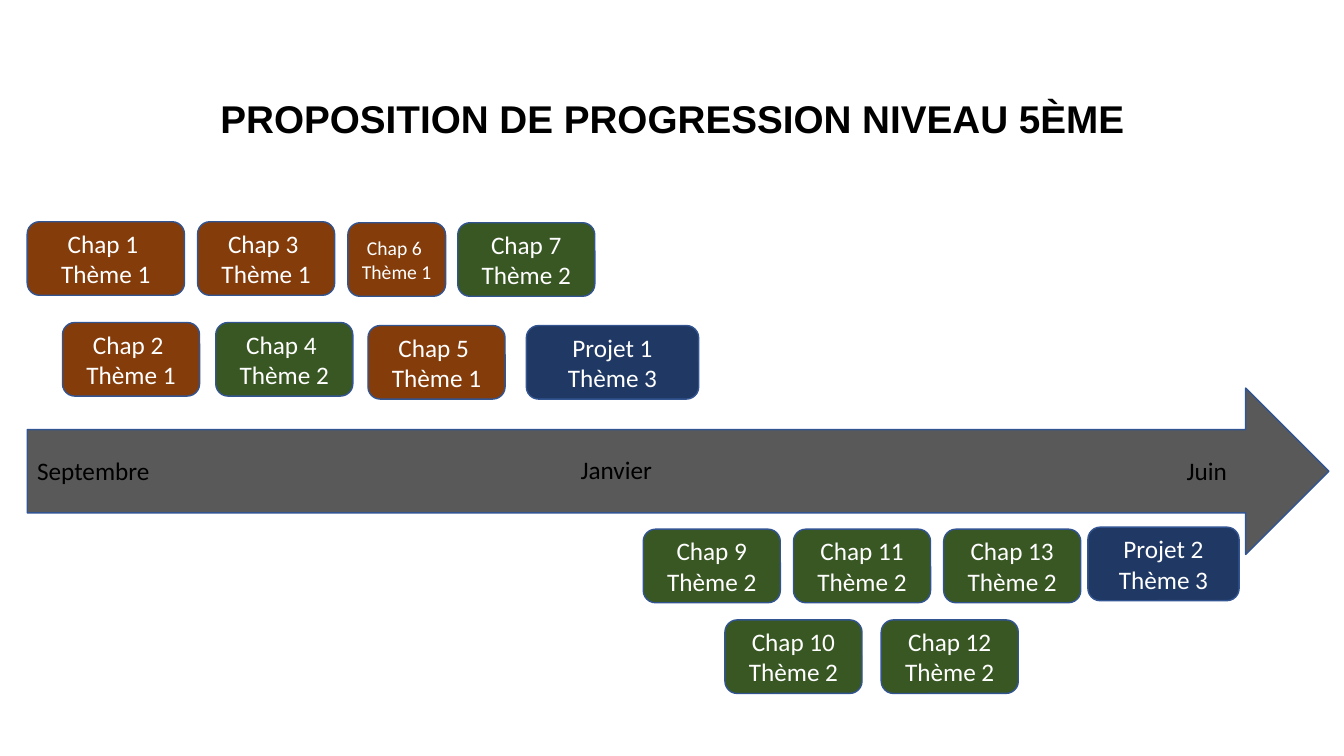
from dataclasses import dataclass

from pptx import Presentation
from pptx.dml.color import RGBColor
from pptx.enum.shapes import MSO_SHAPE
from pptx.enum.text import MSO_ANCHOR, PP_ALIGN
from pptx.util import Emu, Pt

ROUNDED, ARROW = MSO_SHAPE.ROUNDED_RECTANGLE, MSO_SHAPE.RIGHT_ARROW
TOP, MIDDLE, BOTTOM = MSO_ANCHOR.TOP, MSO_ANCHOR.MIDDLE, MSO_ANCHOR.BOTTOM
LEFT, CENTER = PP_ALIGN.LEFT, PP_ALIGN.CENTER

EMU_PER_PX = 9144  # 100 px to the inch


@dataclass(frozen=True)
class Theme:
    body_font: str = "Calibri"
    title_font: str = "Arial"
    title_size: float = 27.6
    body_size: int = 18
    small_size: int = 14
    title_spacing: float = 2.8
    ink: str = "000000"
    light: str = "FFFFFF"
    arrow: str = "595959"
    outline: str = "325491"
    topics: tuple = ("843C0B", "385723", "203864")


def px(length):
    return Emu(length * EMU_PER_PX)


class Timeline:
    def __init__(self, slide, theme):
        self.slide = slide
        self.theme = theme

    def shape(self, preset, box, fill):
        shape = self.slide.shapes.add_shape(preset, *map(px, box))
        shape.shadow.inherit = False
        shape.fill.solid()
        shape.fill.fore_color.rgb = RGBColor.from_string(fill)
        shape.line.color.rgb = RGBColor.from_string(self.theme.outline)
        shape.line.width = Pt(1)
        return shape

    def set_text(self, frame, lines, size, color, align, anchor, font=None):
        """Fill a text frame with one paragraph per line, in one style."""
        frame.word_wrap = True
        frame.vertical_anchor = anchor
        frame.text = "\n".join(lines)
        for paragraph in frame.paragraphs:
            paragraph.alignment = align
            paragraph.font.name = font or self.theme.body_font
            paragraph.font.size = Pt(size)
            paragraph.font.color.rgb = RGBColor.from_string(color)

    def text_box(self, box):
        return self.slide.shapes.add_textbox(*map(px, box)).text_frame

    def title(self, text, box):
        theme = self.theme
        frame = self.text_box(box)
        self.set_text(frame, [text], theme.title_size, theme.ink, CENTER, BOTTOM,
                      theme.title_font)
        heading = frame.paragraphs[0]
        heading.font.bold = True
        heading.line_spacing = theme.title_spacing

    def month(self, name, box):
        self.set_text(self.text_box(box), [name], self.theme.body_size,
                      self.theme.ink, LEFT, TOP)

    def tile(self, label, topic, box, size):
        tile = self.shape(ROUNDED, box, self.theme.topics[topic - 1])
        self.set_text(tile.text_frame, [label, f"Thème {topic}"], size,
                      self.theme.light, CENTER, MIDDLE)


MONTHS = [
    ("Septembre", (27, 447, 187, 40)),
    ("Janvier", (566, 446, 207, 40)),
    ("Juin", (1167, 447, 71, 40)),
]

TILE_WIDTH, TILE_HEIGHT, NARROW_WIDTH = 136, 73, 97

# label, topic, left, top, width
TILES = [
    ("Chap 1 ", 1, 27, 220, 156),
    ("Chap 3 ", 1, 196, 220, TILE_WIDTH),
    ("Chap 6 ", 1, 345, 221, NARROW_WIDTH),
    ("Chap 7", 2, 454, 221, TILE_WIDTH),
    ("Chap 2 ", 1, 62, 320, TILE_WIDTH),
    ("Chap 4 ", 2, 214, 320, TILE_WIDTH),
    ("Chap 5 ", 1, 365, 323, TILE_WIDTH),
    ("Projet 1", 3, 522, 323, 171),
    ("Chap 9", 2, 638, 525, TILE_WIDTH),
    ("Chap 11", 2, 787, 525, TILE_WIDTH),
    ("Chap 13", 2, 936, 525, TILE_WIDTH),
    ("Projet 2", 3, 1079, 523, 150),
    ("Chap 10", 2, 719, 615, TILE_WIDTH),
    ("Chap 12", 2, 874, 615, TILE_WIDTH),
]


def main():
    deck = Presentation()
    deck.slide_width, deck.slide_height = px(1333), px(750)
    theme = Theme()
    timeline = Timeline(deck.slides.add_slide(deck.slide_layouts[6]), theme)

    timeline.shape(ARROW, (27, 385, 1291, 165), theme.arrow)
    for name, box in MONTHS:
        timeline.month(name, box)
    for label, topic, left, top, width in TILES:
        size = theme.small_size if width == NARROW_WIDTH else theme.body_size
        timeline.tile(label, topic, (left, top, width, TILE_HEIGHT), size)
    timeline.title("PROPOSITION DE PROGRESSION NIVEAU 5ÈME", (92, 0, 1150, 145))

    deck.save("out.pptx")


if __name__ == "__main__":
    main()
